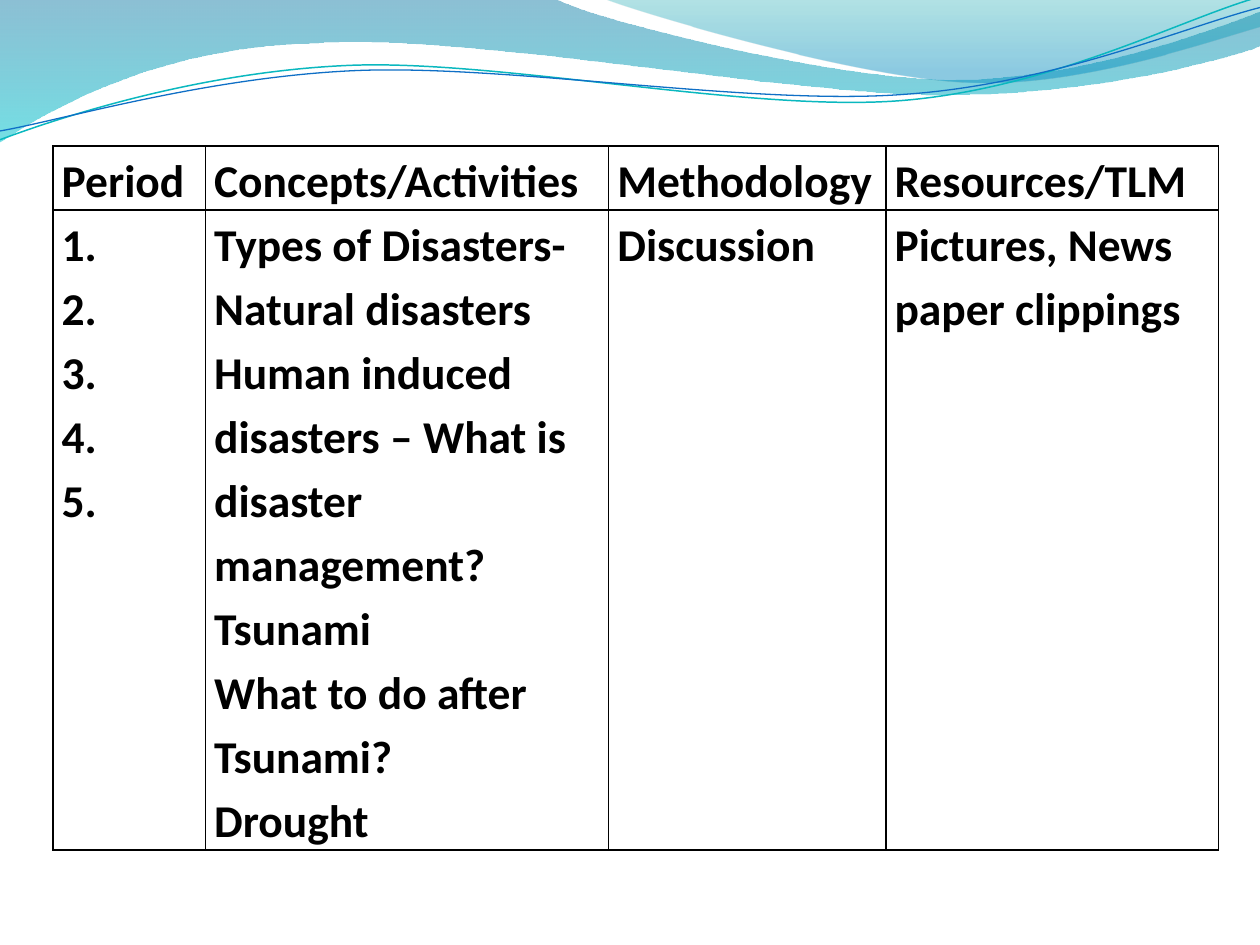
from math import cos, radians, sin

from lxml import etree
from pptx import Presentation
from pptx.dml.color import RGBColor
from pptx.enum.text import MSO_ANCHOR, PP_ALIGN
from pptx.oxml.ns import qn
from pptx.util import Inches, Pt

LEFT = PP_ALIGN.LEFT
TOP = MSO_ANCHOR.TOP
UNITS_PER_INCH = 1000
STRAND_TILT = -2.7

COLORS = {
    "text": "000000",
    "border": "000000",
    "deep_blue": "0074A1",
    "aqua": "00C6CF",
    "teal": "00A1A9",
    "sky": "008BBF",
    "teal_line": "0AB8BF",
    "blue_line": "0F6FC6",
}

WIDE_WAVE = [
    (0, 0), (4.4, -0.01),
    (4.76, 0.17, 6.64, 0.63, 7.58, 0.63),
    (8.53, 0.63, 9.58, 0.26, 10, 0.09),
    (10.01, 0.36),
    (9.83, 0.44, 8.7, 0.76, 7.46, 0.75),
    (6.22, 0.75, 3.82, 0.28, 2.57, 0.34),
    (1.29, 0.36, 0.46, 0.83, -0.01, 1.13),
    (0, 0),
]
RIGHT_WAVE = [
    (4.79, -0.01),
    (5.09, 0.11, 6.82, 0.62, 7.69, 0.65),
    (8.56, 0.69, 9.61, 0.32, 10, 0.21),
    (10, 0), (4.79, -0.01),
]
TEAL_STRAND = [
    (0, 1.11),
    (0.48, 0.93, 1.58, 0.57, 2.77, 0.52),
    (3.95, 0.47, 5.93, 0.89, 7.13, 0.8),
    (8.33, 0.71, 9.38, 0.15, 9.98, -0.02),
]
BLUE_STRAND = [
    (0, 1.04),
    (0.47, 0.96, 1.64, 0.61, 2.83, 0.56),
    (4.03, 0.51, 5.97, 0.84, 7.17, 0.75),
    (8.36, 0.67, 9.41, 0.21, 10, 0.06),
]

COLUMN_WIDTHS = [1.21, 3.2, 2.2, 2.64]
ROW_HEIGHTS = [0.34, 4.2]
LESSON_PLAN = [
    [["Period"], ["Concepts/Activities"], ["Methodology"], ["Resources/TLM"]],
    [
        ["1.", "2.", "3.", "4.", "5."],
        [
            "Types of Disasters-Natural disasters",
            "Human induced disasters – What is disaster management?",
            "Tsunami",
            "What to do after Tsunami?",
            "Drought",
        ],
        ["Discussion"],
        ["Pictures, News paper clippings"],
    ],
]


def rgb(name):
    """Return the named palette colour."""
    return RGBColor.from_string(COLORS[name])


def to_local(x, y, frame, tilt):
    """Express a slide point in the units of a frame tilted about its centre."""
    left, top, width, height = frame
    dx, dy = x - left - width / 2, y - top - height / 2
    angle = radians(-tilt)
    return (dx * cos(angle) - dy * sin(angle) + width / 2,
            dx * sin(angle) + dy * cos(angle) + height / 2)


def add_outline(slide, outline, frame, *, tilt=0, close=False):
    """Draw points and cubic Bezier segments as a freeform in a frame."""
    left, top, width, height = (length * UNITS_PER_INCH for length in frame)
    builder = slide.shapes.build_freeform(left, top, scale=Inches(1) / UNITS_PER_INCH)
    builder.add_line_segments([(left + width, top + height)], close=False)
    shape = builder.convert_to_shape()
    track = next(shape._element.spPr.iter(qn("a:path")))
    for command in list(track):
        track.remove(command)
    for index, segment in enumerate(outline):
        tag = "a:cubicBezTo" if len(segment) == 6 else "a:lnTo" if index else "a:moveTo"
        command = etree.SubElement(track, qn(tag))
        for point in zip(segment[::2], segment[1::2]):
            x, y = to_local(*point, frame, tilt)
            etree.SubElement(command, qn("a:pt"), x=str(round(x * UNITS_PER_INCH)),
                             y=str(round(y * UNITS_PER_INCH)))
    if close:
        etree.SubElement(track, qn("a:close"))
    shape.rotation = tilt
    shape.shadow.inherit = False
    return shape


def add_wave(slide, outline, frame, stops):
    """Add a wave with a translucent gradient from top to bottom."""
    wave = add_outline(slide, outline, frame, close=True)
    wave.line.fill.background()
    wave.fill.gradient()
    wave.fill.gradient_angle = 270
    for stop, (position, color, _) in zip(wave.fill.gradient_stops, stops):
        stop.position = position
        stop.color.rgb = rgb(color)
    swatches = wave._element.spPr.iter(qn("a:srgbClr"))
    for swatch, (_, _, opacity) in zip(swatches, stops):
        etree.SubElement(swatch, qn("a:alpha"), val=str(opacity * 1000))


def add_strand(slide, outline, frame, color, width):
    """Add a thin curved line."""
    strand = add_outline(slide, outline, frame, tilt=STRAND_TILT)
    strand.fill.background()
    strand.line.color.rgb = rgb(color)
    strand.line.width = Pt(width)


def write_text(frame, paragraphs, *, size, color, font="Calibri", bold=False, spacing=1.0):
    """Write formatted paragraphs into a text frame."""
    frame.word_wrap = True
    for index, words in enumerate(paragraphs):
        paragraph = frame.add_paragraph() if index else frame.paragraphs[0]
        paragraph.alignment = LEFT
        paragraph.line_spacing = spacing
        run = paragraph.add_run()
        run.text = words
        run.font.name = font
        run.font.size = Pt(size)
        run.font.bold = bold
        run.font.color.rgb = rgb(color)


def add_borders(cell, color, width):
    """Give all four sides of a cell a solid border."""
    properties = cell._tc.get_or_add_tcPr()
    for side in ("a:lnL", "a:lnR", "a:lnT", "a:lnB"):
        border = etree.SubElement(properties, qn(side), w=str(Pt(width)))
        fill = etree.SubElement(border, qn("a:solidFill"))
        etree.SubElement(fill, qn("a:srgbClr"), val=COLORS[color])


def add_plan_table(slide, left, top):
    """Add the lesson plan table."""
    table = slide.shapes.add_table(
        len(ROW_HEIGHTS), len(COLUMN_WIDTHS), Inches(left), Inches(top),
        Inches(sum(COLUMN_WIDTHS)), Inches(sum(ROW_HEIGHTS))).table
    table.first_row = table.horz_banding = False
    for column, width in zip(table.columns, COLUMN_WIDTHS):
        column.width = Inches(width)
    for row, height, entries in zip(table.rows, ROW_HEIGHTS, LESSON_PLAN):
        row.height = Inches(height)
        for cell, paragraphs in zip(row.cells, entries):
            cell.margin_left = cell.margin_right = Inches(0.07)
            cell.margin_top = cell.margin_bottom = 0
            cell.vertical_anchor = TOP
            add_borders(cell, "border", 1)
            cell.fill.background()
            write_text(cell.text_frame, paragraphs, size=26, color="text",
                       bold=True, spacing=1.15)


def main():
    """Build the lesson plan slide."""
    deck = Presentation()
    deck.slide_width, deck.slide_height = Inches(10), Inches(7.5)
    slide = deck.slides.add_slide(deck.slide_layouts[6])
    add_wave(slide, WIDE_WAVE, (-0.01, -0.01, 10.02, 1.14),
             [(0, "deep_blue", 45), (1, "aqua", 55)])
    add_wave(slide, RIGHT_WAVE, (4.79, -0.01, 5.21, 0.7),
             [(0, "teal", 30), (0.8, "sky", 45)])
    add_strand(slide, TEAL_STRAND, (-0.02, 0.22, 10.02, 0.71), "teal_line", 0.85)
    add_strand(slide, BLUE_STRAND, (-0.02, 0.3, 10.03, 0.58), "blue_line", 0.75)
    add_plan_table(slide, 0.42, 1.16)
    deck.save("out.pptx")


if __name__ == "__main__":
    main()
